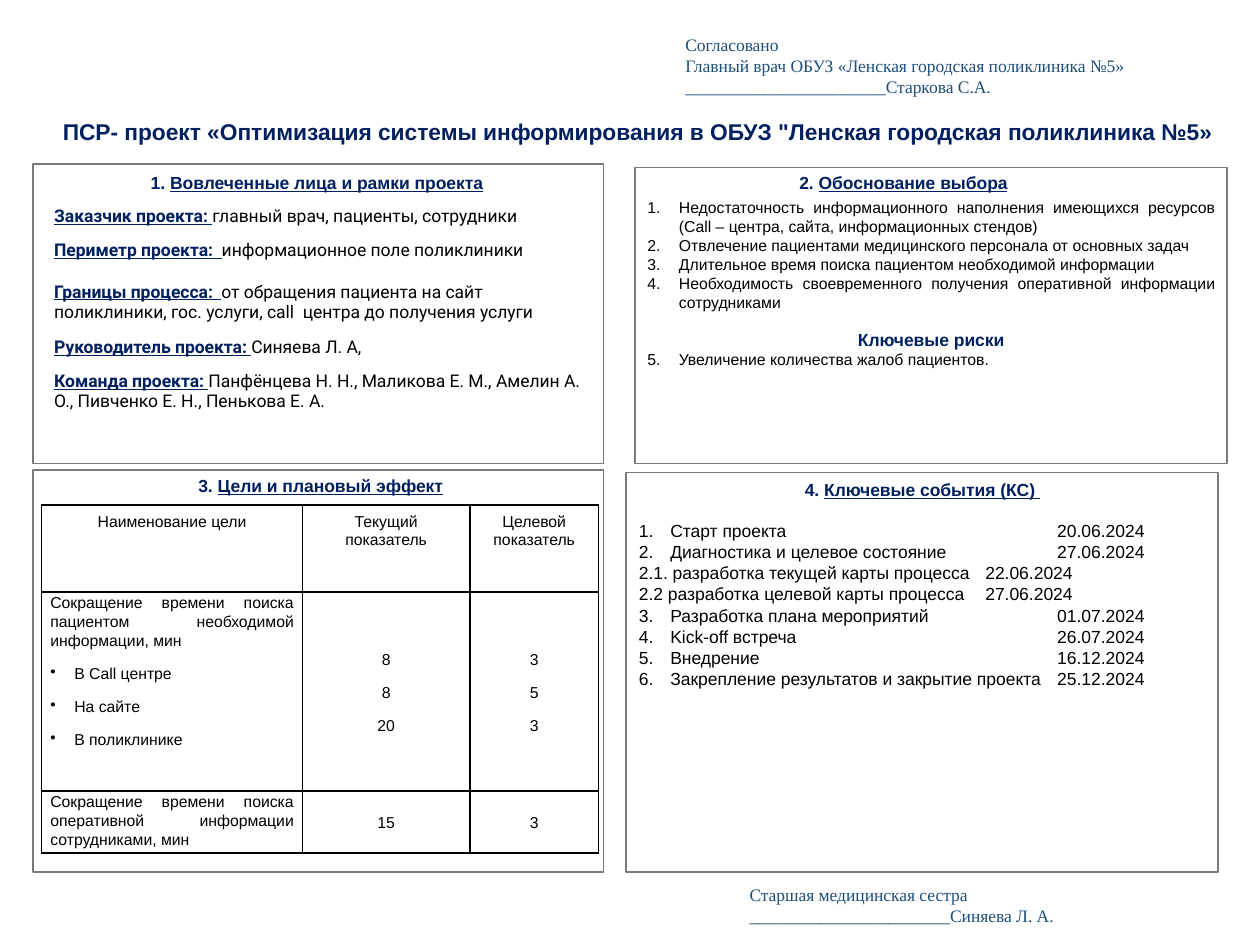
from lxml.etree import SubElement
from pptx import Presentation
from pptx.dml.color import RGBColor
from pptx.enum.shapes import MSO_SHAPE
from pptx.enum.text import MSO_ANCHOR, MSO_AUTO_SIZE, PP_ALIGN
from pptx.oxml.ns import qn
from pptx.util import Inches, Pt

NAVY, BLUE, BLACK, GRAY = "002060", "1F4E79", "000000", "7A7A7A"
LEFT, MID, JUST = PP_ALIGN.LEFT, PP_ALIGN.CENTER, PP_ALIGN.JUSTIFY


def color(code):
    """Turn a hex string into a colour."""
    return RGBColor.from_string(code)


def style(run, size, code=BLACK, face="Arial", bold=False, under=False):
    """Format one run."""
    font = run.font
    font.size, font.name, font.bold, font.underline = Pt(size), face, bold, under
    font.color.rgb = color(code)


def fill(frame, lines, size, align=LEFT, code=BLACK, face="Arial"):
    """Write plain lines into a frame and return its paragraphs."""
    frame.word_wrap = True
    frame.text = "\n".join(lines)
    for para in frame.paragraphs:
        para.alignment = align
        for run in para.runs:
            style(run, size, code, face)
    return frame.paragraphs


def pair(para, label, text, size, first, second):
    """Write a label and the text after it, each in its own format."""
    para.text = label
    style(para.runs[0], size, **first)
    run = para.add_run()
    run.text = text
    style(run, size, **second)


def mark(para, indent, kind, **attrs):
    """Give a paragraph a hanging indent and a bullet element."""
    props = para._p.get_or_add_pPr()
    props.set("marL", str(Inches(indent)))
    props.set("indent", str(-Inches(indent)))
    SubElement(props, qn("a:" + kind), attrs)
    return props


def count(para, start):
    """Number a paragraph within a list that begins at start."""
    return mark(para, 0.25, "buAutoNum", type="arabicPeriod", startAt=str(start))


def note(slide, box, lines):
    """Place a signature block."""
    frame = slide.shapes.add_textbox(*map(Inches, box)).text_frame
    fill(frame, lines, 10, code=BLUE, face="Times New Roman")


def panel(slide, box, label, text, shift, drop):
    """Draw a framed panel with its heading and return the frame shape."""
    left, top, width, _ = box
    shape = slide.shapes.add_shape(MSO_SHAPE.RECTANGLE, *map(Inches, box))
    shape.shadow.inherit = False
    shape.fill.solid()
    shape.fill.fore_color.rgb = color("FFFFFF")
    shape.line.color.rgb = color(GRAY)
    shape.line.width = Pt(1)
    head = slide.shapes.add_textbox(
        Inches(left + shift), Inches(top + drop), Inches(width), Inches(0.27))
    para = head.text_frame.paragraphs[0]
    head.text_frame.word_wrap = True
    para.alignment = MID
    look = dict(code=NAVY, bold=True)
    pair(para, label, text, 10, look, dict(look, under=True))
    return shape


def edge(cell, code=None):
    """Set all four borders of a cell, or clear them."""
    props = cell._tc.get_or_add_tcPr()
    for side in ("lnL", "lnR", "lnT", "lnB"):
        line = SubElement(props, qn("a:" + side), w=str(Pt(1)))
        if code:
            paint = SubElement(line, qn("a:solidFill"))
            SubElement(paint, qn("a:srgbClr"), val=code)
        else:
            SubElement(line, qn("a:noFill"))
    cell.fill.background()


def grid(slide, left, top, cols, rows, code=None):
    """Add an unstyled table with the given column widths and row heights."""
    table = slide.shapes.add_table(
        len(rows), len(cols), Inches(left), Inches(top),
        Inches(sum(cols)), Inches(sum(rows))).table
    table.first_row = table.horz_banding = False
    for col, width in zip(table.columns, cols):
        col.width = Inches(width)
    for row, height in zip(table.rows, rows):
        row.height = Inches(height)
    for cell in table.iter_cells():
        edge(cell, code)
    return table


def people(slide, box):
    """Build the panel of people and project limits."""
    left, top, _, _ = box
    panel(slide, box, "1. ", "Вовлеченные лица и рамки проекта", -0.01, 0.02)
    rows = [
        [("Заказчик проекта: ", "главный врач, пациенты, сотрудники")],
        [("Периметр проекта:  ", "информационное поле поликлиники"),
         ("Границы процесса:  ", "от обращения пациента на сайт поликлиники, "
          "гос. услуги, call  центра до получения услуги")],
        [("Руководитель проекта: ", "Синяева Л. А,")],
        [("Команда проекта: ", "Панфёнцева Н. Н., Маликова Е. М., Амелин А. О., "
          "Пивченко Е. Н., Пенькова Е. А.")],
    ]
    table = grid(slide, left + 0.07, top + 0.29, [4.44], [0.27, 0.76, 0.27, 0.43])
    first = dict(code=NAVY, face="Roboto", bold=True, under=True)
    for cell, items in zip(table.iter_cells(), rows):
        frame = cell.text_frame
        for i, (label, text) in enumerate(items):
            para = frame.add_paragraph() if i else frame.paragraphs[0]
            para.space_before = Pt(12 * i)
            pair(para, label, text, 10, first, dict(face="Roboto"))


def reasons(slide, box):
    """Build the panel of reasons and key risks."""
    shape = panel(slide, box, "2. ", "Обоснование выбора", -0.22, -0.01)
    frame = shape.text_frame
    frame.vertical_anchor = MSO_ANCHOR.TOP
    frame.margin_top = Inches(0.24)
    paras = fill(frame, [
        "Недостаточность информационного наполнения имеющихся ресурсов "
        "(Call – центра, сайта, информационных стендов)",
        "Отвлечение пациентами медицинского персонала от основных задач",
        "Длительное время поиска пациентом необходимой информации",
        "Необходимость своевременного получения оперативной информации сотрудниками",
        "Ключевые риски",
        "Увеличение количества жалоб пациентов."], 9, JUST)
    *items, title, last = paras
    for para in items:
        count(para, 1)
    count(last, 5)
    title.alignment = MID
    title.space_before = Pt(10)
    style(title.runs[0], 10, NAVY, bold=True)


def goals(slide, box):
    """Build the panel of goals with its table."""
    left, top, _, _ = box
    panel(slide, box, "3. ", "Цели и плановый эффект", 0.02, -0.01)
    rows = [
        [["Наименование цели"], ["Текущий показатель"], ["Целевой показатель"]],
        [["Сокращение времени поиска пациентом необходимой информации, мин",
          "В Call центре", "На сайте", "В поликлинике"],
         ["8", "8", "20"], ["3", "5", "3"]],
        [["Сокращение времени поиска оперативной информации сотрудниками, мин"],
         ["15"], ["3"]],
    ]
    table = grid(slide, left + 0.07, top + 0.28, [2.07, 1.33, 1.02],
                 [0.69, 1.58, 0.49], BLACK)
    for r, row in enumerate(rows):
        for c, lines in enumerate(row):
            cell = table.cell(r, c)
            if r:
                cell.margin_left = cell.margin_right = Inches(0.07)
                cell.margin_top, cell.margin_bottom = Inches(0.01), 0
                cell.vertical_anchor = MSO_ANCHOR.MIDDLE if c else MSO_ANCHOR.TOP
            paras = fill(cell.text_frame, lines, 9, MID if c or not r else JUST)
            for i, para in enumerate(paras):
                para.line_spacing, para.space_after = 1.07, Pt(8)
                if i and not c:
                    mark(para, 0.19, "buChar", char="•")


def events(slide, box):
    """Build the panel of key events with dates at a tab stop."""
    left, top, _, _ = box
    panel(slide, box, "4. ", "Ключевые события (КС) ", 0, 0)
    steps = [
        (1, "Старт проекта", "20.06.2024"),
        (1, "Диагностика и целевое состояние", "27.06.2024"),
        (0, "2.1. разработка текущей карты процесса", "22.06.2024"),
        (0, "2.2 разработка целевой карты процесса", "27.06.2024"),
        (3, "Разработка плана мероприятий", "01.07.2024"),
        (3, "Kick-off встреча", "26.07.2024"),
        (3, "Внедрение", "16.12.2024"),
        (3, "Закрепление результатов и закрытие проекта", "25.12.2024"),
    ]
    body = slide.placeholders[1]
    body.left, body.top = Inches(left), Inches(top + 0.33)
    body.width, body.height = Inches(4.57), Inches(1.62)
    body.text_frame.auto_size = MSO_AUTO_SIZE.NONE
    paras = fill(body.text_frame, [f"{name}\t{date}" for _, name, date in steps], 10)
    for para, (start, _, _) in zip(paras, steps):
        para.space_before = Pt(0)
        props = count(para, start) if start else mark(para, 0.25, "buNone")
        tabs = SubElement(props, qn("a:tabLst"))
        SubElement(tabs, qn("a:tab"), pos=str(Inches(3.32)), algn="l")
    slide.shapes._spTree.append(body._element)


def head(slide, box, text):
    """Place the slide title."""
    title = slide.shapes.title
    title.left, title.top, title.width, title.height = map(Inches, box)
    frame = title.text_frame
    frame.auto_size = MSO_AUTO_SIZE.NONE
    frame.vertical_anchor = MSO_ANCHOR.MIDDLE
    frame.margin_left = frame.margin_right = frame.margin_top = frame.margin_bottom = 0
    para = fill(frame, [text], 13, MID)[0]
    para.line_spacing = 0.9
    style(para.runs[0], 13, NAVY, bold=True)


def main():
    """Build and save the slide."""
    deck = Presentation()
    deck.slide_width, deck.slide_height = Inches(10), Inches(7.5)
    slide = deck.slides.add_slide(deck.slide_layouts[1])
    head(slide, (0.14, 0.7, 9.83, 0.71), "ПСР- проект «Оптимизация системы "
         "информирования в ОБУЗ \"Ленская городская поликлиника №5»")
    people(slide, (0.26, 1.3, 4.53, 2.38))
    goals(slide, (0.26, 3.73, 4.53, 3.19))
    reasons(slide, (5.04, 1.33, 4.7, 2.35))
    events(slide, (4.97, 3.75, 4.7, 3.17))
    line = "_" * 23
    note(slide, (5.34, 0.22, 3.82, 0.61), [
        "Согласовано", "Главный врач ОБУЗ «Ленская городская поликлиника №5»",
        line + "Старкова С.А."])
    note(slide, (5.85, 6.97, 3.82, 0.44), [
        "Старшая медицинская сестра", line + "Синяева Л. А."])
    deck.save("out.pptx")


if __name__ == "__main__":
    main()
